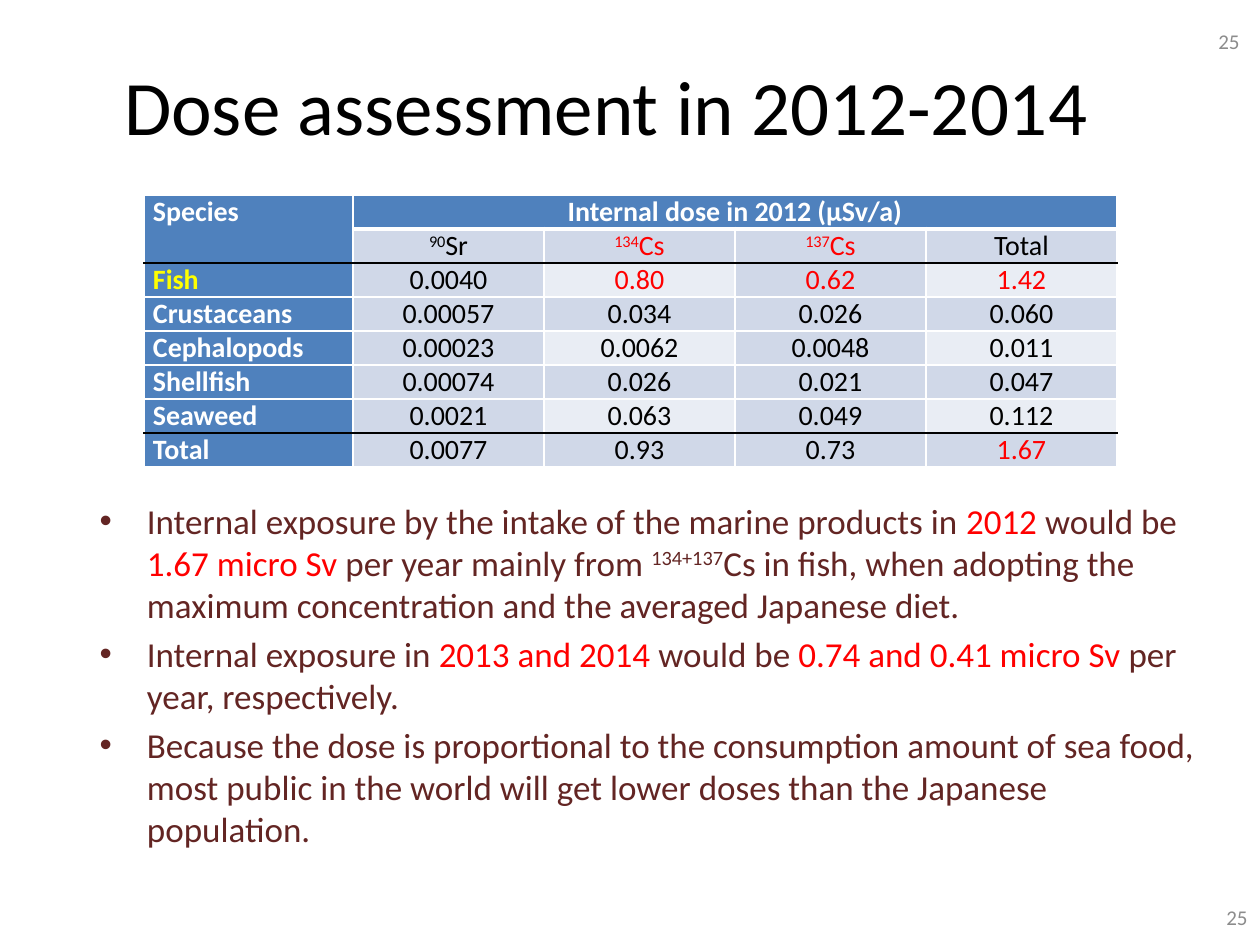
"""Build the slide on internal dose from marine products."""
from dataclasses import dataclass

from pptx import Presentation
from pptx import util as u
from pptx.dml.color import RGBColor
from pptx.enum import text
from pptx.oxml.ns import qn
from lxml import etree

EMU_PER_PX = 914400 / 126
ALIGN = text.PP_ALIGN
MIDDLE = text.MSO_ANCHOR.MIDDLE


@dataclass(frozen=True)
class Theme:
    """Colours, type sizes and font of the slide."""
    font: str = "Calibri"
    title_size: int = 44
    body_size: int = 20
    table_size: int = 16
    number_size: int = 12
    black: str = "000000"
    white: str = "FFFFFF"
    red: str = "FF0000"
    yellow: str = "FFFF00"
    brown: str = "632523"
    grey: str = "8C8C8C"
    head: str = "4F81BD"
    band: str = "D0D8E8"
    light: str = "E9EDF4"


THEME = Theme()
PAGE_NUMBER = "25"
ISOTOPES = [("90", "Sr"), ("134", "Cs"), ("137", "Cs"), ("", "Total")]
DOSES = [
    ("Fish", "0.0040", "0.80", "0.62", "1.42"),
    ("Crustaceans", "0.00057", "0.034", "0.026", "0.060"),
    ("Cephalopods", "0.00023", "0.0062", "0.0048", "0.011"),
    ("Shellfish", "0.00074", "0.026", "0.021", "0.047"),
    ("Seaweed", "0.0021", "0.063", "0.049", "0.112"),
    ("Total", "0.0077", "0.93", "0.73", "1.67"),
]
RED = {"colour": THEME.red}
SUPER = {"raised": True}
FINDINGS = [
    [("Internal exposure by the intake of the marine products in ", {}),
     ("2012 ", RED), ("would be ", {}), ("1.67 micro Sv ", RED),
     ("per year mainly from ", {}), ("134+137", SUPER),
     ("Cs in fish, when adopting the maximum concentration and the "
      "averaged Japanese diet.", {})],
    [("Internal exposure in ", {}), ("2013 and 2014 ", RED),
     ("would be ", {}), ("0.74 and 0.41 micro Sv ", RED),
     ("per year, respectively.", {})],
    [("Because the dose is proportional to the consumption amount of sea "
      "food, most public in the world will get lower doses than the "
      "Japanese population.", {})],
]


def px(length):
    """Turn pixels into EMU."""
    return u.Emu(round(length * EMU_PER_PX))


def apply(target, values):
    """Set each named attribute on the target."""
    for name, value in values.items():
        setattr(target, name, value)


def place(box, left, top, width, height):
    """Move and size a shape in pixels."""
    apply(box, {"left": px(left), "top": px(top),
                "width": px(width), "height": px(height)})


def add_span(para, words, size, colour, bold=False, raised=False):
    """Add one formatted run to a paragraph."""
    span = para.add_run()
    span.text = words
    apply(span.font, {"name": THEME.font, "size": u.Pt(size), "bold": bold})
    span.font.color.rgb = RGBColor.from_string(colour)
    if raised:
        span.font._element.set("baseline", "30000")


def add_title(page, words):
    """Fill the title placeholder."""
    box = page.shapes.title
    place(box, 48, 26, 1134, 158)
    box.text_frame.vertical_anchor = MIDDLE
    para = box.text_frame.paragraphs[0]
    para.alignment = ALIGN.CENTER
    add_span(para, words, THEME.title_size, THEME.black)


def add_number(page, *bounds):
    """Add a right-aligned page number."""
    box = page.shapes.add_textbox(*map(px, bounds))
    apply(box.text_frame, {"word_wrap": True, "vertical_anchor": MIDDLE})
    para = box.text_frame.paragraphs[0]
    para.alignment = ALIGN.RIGHT
    add_span(para, PAGE_NUMBER, THEME.number_size, THEME.grey)


def add_findings(page, findings):
    """Fill the body placeholder with the bulleted findings."""
    box = page.placeholders[1]
    place(box, 87, 493, 1134, 425)
    frame = box.text_frame
    frame.auto_size = text.MSO_AUTO_SIZE.NONE
    for index, spans in enumerate(findings):
        para = frame.add_paragraph() if index else frame.paragraphs[0]
        for words, style in spans:
            add_span(para, words, THEME.body_size,
                     **{"colour": THEME.brown, **style})


def set_border(cell, side, colour, points=1):
    """Draw one edge of a cell."""
    properties = cell._tc.get_or_add_tcPr()
    line = etree.SubElement(properties, qn(f"a:ln{side}"),
                            w=str(u.Pt(points)))
    fill = etree.SubElement(line, qn("a:solidFill"))
    etree.SubElement(fill, qn("a:srgbClr"), val=colour)


def format_cell(cell, row, column):
    """Give a cell its margins, edges and fill by its position."""
    apply(cell, {"margin_left": px(9), "margin_right": px(9),
                 "margin_top": 0, "margin_bottom": 0})
    if row < 2 and column:
        cell.vertical_anchor = MIDDLE
    black_below = row in (1, 6) or (row, column) == (0, 0)
    set_border(cell, "L", THEME.white)
    set_border(cell, "R", THEME.white)
    set_border(cell, "T", THEME.black if row in (2, 7) else THEME.white)
    set_border(cell, "B", THEME.black if black_below else THEME.white,
               3 if row == 0 and column else 1)
    light = row in (2, 4, 6) and column in (2, 4)
    colour = THEME.light if light else THEME.band
    cell.fill.solid()
    cell.fill.fore_color.rgb = RGBColor.from_string(
        THEME.head if row == 0 or column == 0 else colour)


def write_cell(cell, words, colour, bold=False, align=ALIGN.CENTER, raised=""):
    """Write a cell, with an optional raised prefix."""
    para = cell.text_frame.paragraphs[0]
    para.alignment = align
    if raised:
        add_span(para, raised, THEME.table_size, colour, bold, True)
    add_span(para, words, THEME.table_size, colour, bold)


def add_dose_table(page):
    """Add the table of doses by species and isotope."""
    rows, columns, row_height = len(DOSES) + 2, 5, 34
    widths = [209] + [191] * (columns - 1)
    table = page.shapes.add_table(
        rows, columns, px(144), px(195), px(sum(widths)),
        px(rows * row_height)).table
    apply(table, {"first_row": False, "horz_banding": False})
    for column, width in zip(table.columns, widths):
        column.width = px(width)
    for row in range(rows):
        table.rows[row].height = px(row_height)
        for column in range(columns):
            format_cell(table.cell(row, column), row, column)
    table.cell(0, 0).merge(table.cell(1, 0))
    table.cell(0, 1).merge(table.cell(0, columns - 1))
    write_cell(table.cell(0, 0), "Species", THEME.white, True, ALIGN.JUSTIFY)
    write_cell(table.cell(0, 1), "Internal dose in 2012 (μSv/a)",
               THEME.white, True)
    for column, (mass, name) in enumerate(ISOTOPES, 1):
        colour = THEME.red if name == "Cs" else THEME.black
        write_cell(table.cell(1, column), name, colour, raised=mass)
    for row, (species, *values) in enumerate(DOSES, 2):
        colour = THEME.yellow if species == "Fish" else THEME.white
        write_cell(table.cell(row, 0), species, colour, True, ALIGN.LEFT)
        for column, value in enumerate(values, 1):
            notable = (row == 2 and column > 1) or (row, column) == (7, 4)
            write_cell(table.cell(row, column), value,
                       THEME.red if notable else THEME.black)


def main():
    """Build and save the deck."""
    deck = Presentation()
    apply(deck, {"slide_width": px(1260), "slide_height": px(945)})
    page = deck.slides.add_slide(deck.slide_layouts[1])
    add_title(page, "Dose assessment in 2012-2014 ")
    add_number(page, 958, 16, 294, 50)
    add_number(page, 1100, 892, 160, 50)
    add_findings(page, FINDINGS)
    add_dose_table(page)
    deck.save("out.pptx")


if __name__ == "__main__":
    main()
